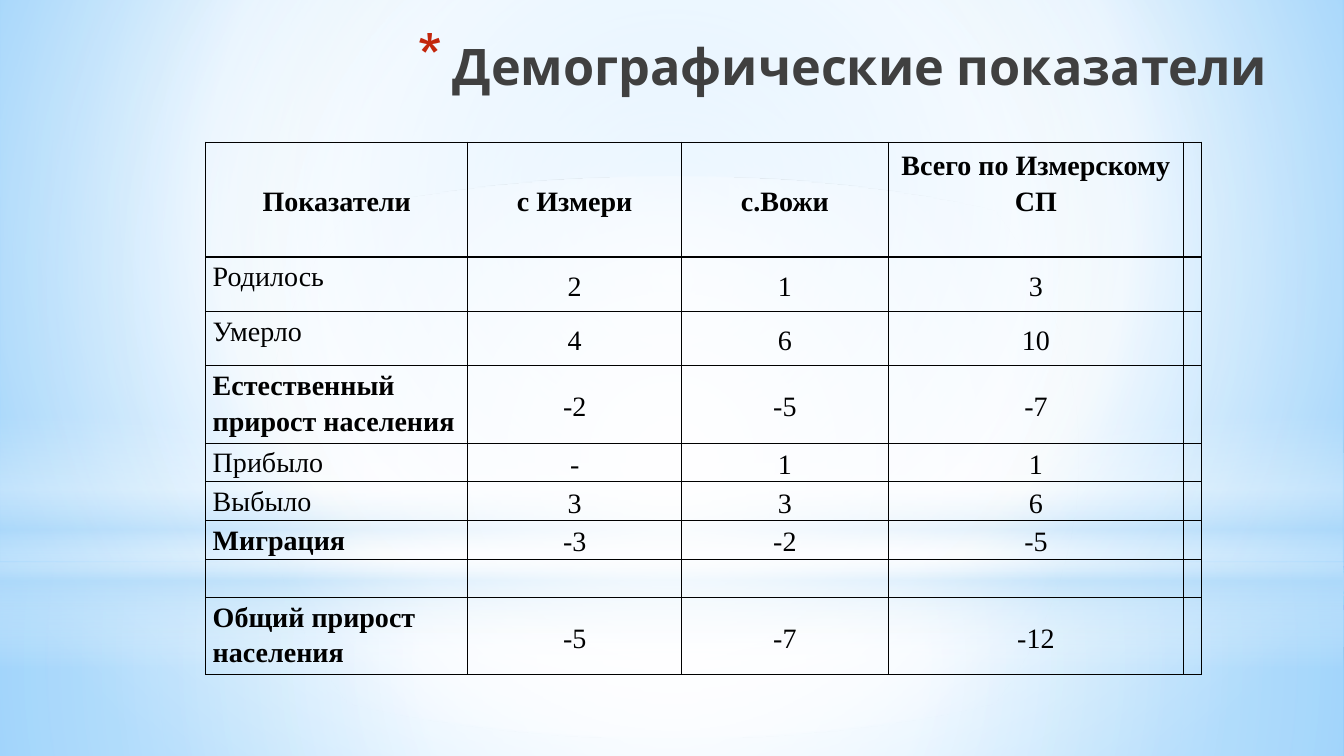
from pptx import Presentation
from pptx.dml.color import RGBColor
from pptx.enum.shapes import MSO_SHAPE as Preset
from pptx.enum.text import MSO_ANCHOR as Anchor, PP_ALIGN as Align
from pptx.oxml import parse_xml
from pptx.oxml.ns import nsdecls, qn
from pptx.util import Inches, Pt

COLORS = {
    "black": "000000", "title": "404040", "bullet": "C3260C",
    "white": "FFFFFF", "mist": "B4DCFA", "sky": "9ED5FF", "azure": "5BB9FF",
}
CENTER = (50, 50, 50, 50)
COLUMN_WIDTHS = (2.6, 2.12, 2.05, 2.93, 0.18)
ROW_HEIGHTS = (1.14, 0.54, 0.54, 0.76, 0.38, 0.38, 0.38, 0.38, 0.76)
ROWS = (
    ("Показатели", "с Измери", "с.Вожи", "Всего по Измерскому СП", ""),
    ("Родилось", "2", "1", "3", ""),
    ("Умерло", "4", "6", "10", ""),
    ("Естественный прирост населения", "-2", "-5", "-7", ""),
    ("Прибыло", "-", "1", "1", ""),
    ("Выбыло", "3", "3", "6", ""),
    ("Миграция", "-3", "-2", "-5", ""),
    ("", "", "", "", ""),
    ("Общий прирост населения", "-5", "-7", "-12", ""),
)
BOLD_LABELS = {"Естественный прирост населения", "Миграция", "Общий прирост населения"}


class SlideBuilder:
    title_font = "Karla"
    table_font = "Times New Roman"

    def __init__(self, presentation):
        self.slide = presentation.slides.add_slide(presentation.slide_layouts[6])

    def gradient(self, stops, focus=None):
        stop_xml = "".join(
            f'<a:gs pos="{position * 1000}"><a:srgbClr val="{COLORS[color]}">'
            f'<a:alpha val="{opacity * 1000}"/></a:srgbClr></a:gs>'
            for position, color, opacity in stops
        )
        if focus:
            sides = " ".join(f'{side}="{value * 1000}"' for side, value in zip("ltrb", focus))
            direction = f'<a:path path="circle"><a:fillToRect {sides}/></a:path>'
        else:
            direction = '<a:lin ang="5400000" scaled="0"/>'
        return parse_xml(
            f'<a:gradFill {nsdecls("a")} rotWithShape="1">'
            f"<a:gsLst>{stop_xml}</a:gsLst>{direction}</a:gradFill>"
        )

    def replace_fill(self, properties, gradient):
        solid = properties.find(qn("a:solidFill"))
        properties.replace(solid, gradient)

    def background(self, stops, focus):
        self.slide.background.fill.solid()
        properties = self.slide.element.find(".//" + qn("p:bgPr"))
        self.replace_fill(properties, self.gradient(stops, focus))

    def glow(self, preset, top, height, stops, focus=None):
        shape = self.slide.shapes.add_shape(
            preset, Inches(0), Inches(top), Inches(13.33), Inches(height))
        shape.shadow.inherit = False
        shape.line.fill.background()
        shape.fill.solid()
        self.replace_fill(shape.element.spPr, self.gradient(stops, focus))

    def style(self, paragraph, name, size, color, bold, align):
        paragraph.alignment = align
        font = paragraph.font
        font.name, font.size, font.bold = name, Pt(size), bold
        font.color.rgb = RGBColor.from_string(COLORS[color])

    def title(self, text, left, top, width, height):
        shape = self.slide.shapes.add_textbox(
            Inches(left), Inches(top), Inches(width), Inches(height))
        frame = shape.text_frame
        frame.word_wrap = True
        frame.vertical_anchor = Anchor.TOP
        paragraph = frame.paragraphs[0]
        paragraph.text = text
        self.style(paragraph, self.title_font, 36, "title", True, Align.RIGHT)
        properties = paragraph._p.get_or_add_pPr()
        properties.set("marL", str(Inches(0.35)))
        properties.set("indent", str(Inches(-0.35)))
        bullet_parts = (
            f'<a:buClr {nsdecls("a")}><a:srgbClr val="{COLORS["bullet"]}"/></a:buClr>',
            f'<a:buSzPct {nsdecls("a")} val="128000"/>',
            f'<a:buChar {nsdecls("a")} char="*"/>',
        )
        for index, part in enumerate(bullet_parts):
            properties.insert(index, parse_xml(part))

    def borders(self, cell):
        properties = cell._tc.get_or_add_tcPr()
        for index, side in enumerate("LRTB"):
            properties.insert(index, parse_xml(
                f'<a:ln{side} {nsdecls("a")} w="{Pt(1)}"><a:solidFill>'
                f'<a:srgbClr val="{COLORS["black"]}"/></a:solidFill></a:ln{side}>'))

    def cell(self, cell, text, bold, is_label):
        cell.margin_left = cell.margin_right = Inches(0.07)
        cell.margin_top = cell.margin_bottom = Inches(0)
        cell.vertical_anchor = Anchor.TOP if is_label else Anchor.MIDDLE
        cell.text = text
        paragraph = cell.text_frame.paragraphs[0]
        paragraph.line_spacing = 1.15
        align = Align.LEFT if is_label else Align.CENTER
        self.style(paragraph, self.table_font, 20, "black", bold, align)
        self.borders(cell)
        cell.fill.background()

    def table(self, left, top, rows, widths, heights):
        table = self.slide.shapes.add_table(
            len(rows), len(widths), Inches(left), Inches(top),
            Inches(sum(widths)), Inches(sum(heights))).table
        table.first_row = table.horz_banding = False
        for column, width in zip(table.columns, widths):
            column.width = Inches(width)
        for row, height in zip(table.rows, heights):
            row.height = Inches(height)
        for row_index, values in enumerate(rows):
            is_header = row_index == 0
            for column_index, text in enumerate(values):
                is_label = column_index == 0 and not is_header
                self.cell(table.cell(row_index, column_index), text,
                          is_header or text in BOLD_LABELS, is_label)
        return table


def main():
    presentation = Presentation()
    presentation.slide_width, presentation.slide_height = Inches(13.33), Inches(7.5)
    builder = SlideBuilder(presentation)
    builder.background(
        [(0, "sky", 100), (60, "white", 100), (100, "azure", 100)], (20, 10, 20, 60))
    builder.glow(Preset.RECTANGLE, 5.58, 1.92,
                 [(0, "white", 91), (37, "white", 76), (100, "mist", 79)], CENTER)
    builder.glow(Preset.RECTANGLE, 0, 5.58,
                 [(0, "white", 89), (48, "white", 62), (100, "mist", 79)], CENTER)
    builder.glow(Preset.RECTANGLE, 4.12, 2.5,
                 [(0, "white", 0), (29, "white", 30), (45, "mist", 40),
                  (55, "white", 26), (65, "mist", 60), (100, "white", 0)])
    builder.glow(Preset.OVAL, 1.75, 5.58, [(0, "white", 100), (56, "white", 0)], CENTER)
    builder.title("Демографические показатели", 0.67, 0.3, 12, 0.85)
    table = builder.table(2.04, 1.41, ROWS, COLUMN_WIDTHS, ROW_HEIGHTS)
    table.cell(0, 3).margin_bottom = Inches(0.35)
    presentation.save("out.pptx")


if __name__ == "__main__":
    main()
